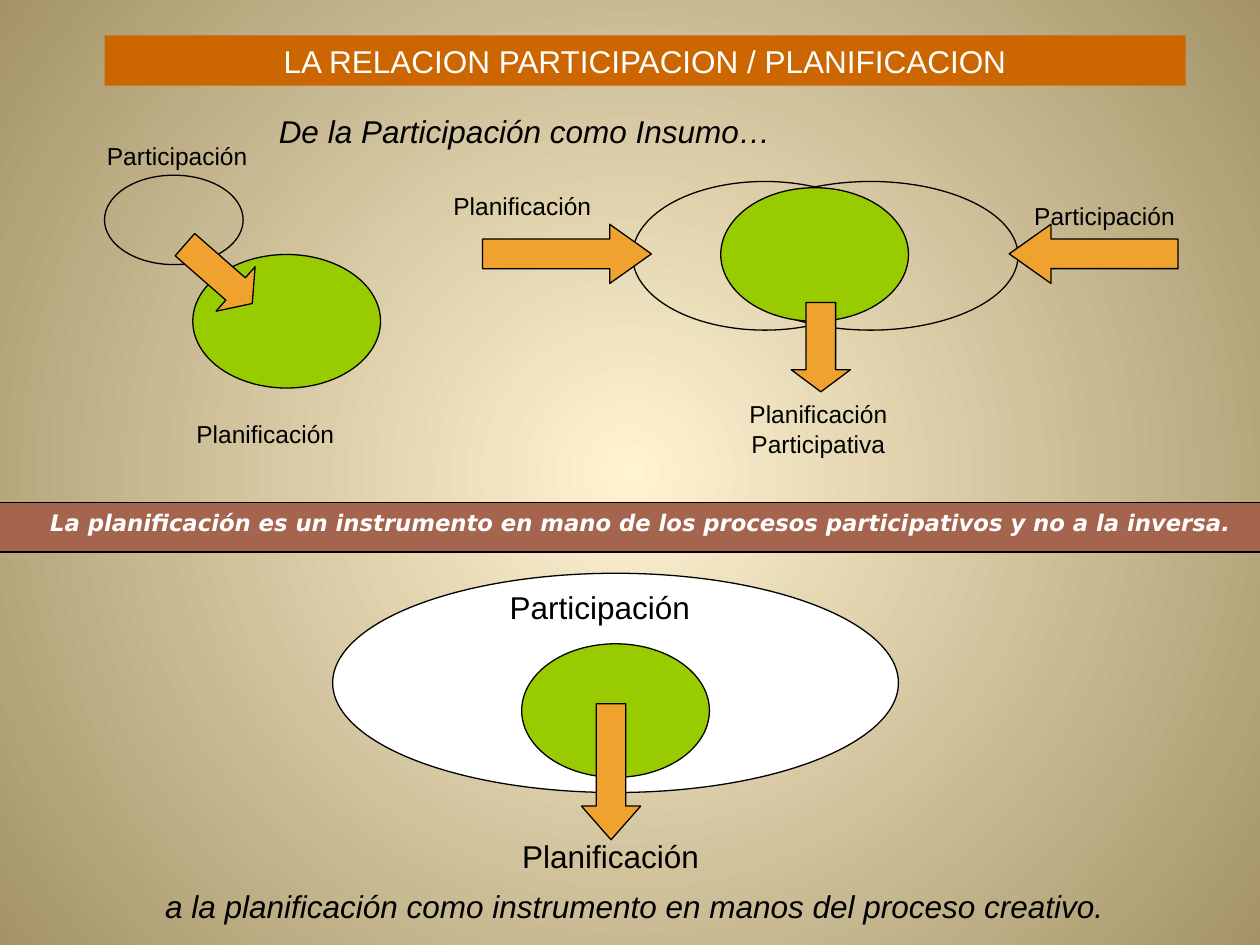
from lxml.etree import SubElement
from pptx import Presentation
from pptx.dml.color import RGBColor
from pptx.enum.shapes import MSO_SHAPE as SHAPE
from pptx.enum.text import MSO_ANCHOR as ANCHOR, PP_ALIGN as ALIGN
from pptx.oxml.ns import qn
from pptx.util import Inches, Pt

COLORS = {
    "black": "000000",
    "white": "FFFFFF",
    "green": "99CC00",
    "arrow": "F0A22E",
    "banner": "A5644E",
    "title": "CC6600",
    "glow": "FFF3D2",
    "edge": "A49468",
}
GREEN_SIZE = (1.49, 1.06)
ARROW_WIDTH = 0.47


def rgb(name):
    return RGBColor.from_string(COLORS[name])


def set_background(slide):
    """Circular gradient, light in the middle of the slide."""
    fill = slide.background.fill
    fill.gradient()
    for stop, name in zip(fill.gradient_stops, ("glow", "edge")):
        stop.color.rgb = rgb(name)
    grad = slide._element.find(".//" + qn("a:gradFill"))
    grad.remove(grad.find(qn("a:lin")))
    circle = SubElement(grad, qn("a:path"), {"path": "circle"})
    SubElement(circle, qn("a:fillToRect"), dict.fromkeys("ltrb", "50000"))


def write(sp, text, size=14, color="black", font="Arial", align=ALIGN.CENTER,
          bold=False, italic=False):
    tf = sp.text_frame
    tf.word_wrap = True
    tf.vertical_anchor = ANCHOR.TOP
    tf.margin_left = tf.margin_right = Inches(0.1)
    tf.margin_top = tf.margin_bottom = Inches(0.05)
    p = tf.paragraphs[0]
    p.alignment = align
    r = p.add_run()
    r.text = text
    r.font.name, r.font.size = font, Pt(size)
    r.font.bold, r.font.italic = bold, italic
    r.font.color.rgb = rgb(color)


def add_label(slide, text, left, top, width=1.89, height=0.33, **style):
    box = slide.shapes.add_textbox(*map(Inches, (left, top, width, height)))
    write(box, text, **style)


def add_outlined(slide, kind, left, top, width, height, fill=None):
    sp = slide.shapes.add_shape(kind, *map(Inches, (left, top, width, height)))
    sp.shadow.inherit = False
    if fill:
        sp.fill.solid()
        sp.fill.fore_color.rgb = rgb(fill)
    else:
        sp.fill.background()
    sp.line.color.rgb = rgb("black")
    sp.line.width = Pt(0.75)
    return sp


def add_oval(slide, left, top, width, height, fill=None):
    add_outlined(slide, SHAPE.OVAL, left, top, width, height, fill)


def add_arrow(slide, left, top, length, head, rotation=0):
    """Left arrow turned by rotation; head is its length over its width."""
    sp = add_outlined(slide, SHAPE.LEFT_ARROW, left, top, length, ARROW_WIDTH, "arrow")
    sp.adjustments[0], sp.adjustments[1] = 0.5, head
    sp.rotation = rotation


def add_title(slide, text):
    sp = slide.shapes.title
    sp.left, sp.top, sp.width, sp.height = map(Inches, (0.83, 0.28, 8.58, 0.4))
    sp.fill.solid()
    sp.fill.fore_color.rgb = rgb("title")
    write(sp, text, size=18, color="white")


def add_input_diagram(slide):
    add_oval(slide, 1.53, 2.02, *GREEN_SIZE, fill="green")
    add_oval(slide, 0.83, 1.39, 1.1, 0.71)
    add_arrow(slide, 1.38, 1.94, 0.71, 0.374, rotation=221.2)
    add_label(slide, "Participación", 0.75, 1.07, align=ALIGN.LEFT)
    add_label(slide, "Planificación", 1.46, 3.28, align=ALIGN.LEFT)


def add_overlap_diagram(slide):
    add_oval(slide, 5.02, 1.44, 2.1, 1.18)
    add_oval(slide, 5.74, 1.44, 2.34, 1.18)
    add_oval(slide, 5.72, 1.49, *GREEN_SIZE, fill="green")
    add_arrow(slide, 3.83, 1.78, 1.34, 0.706, rotation=180)
    add_arrow(slide, 8.01, 1.78, 1.34, 0.706)
    add_arrow(slide, 6.16, 2.52, 0.71, 0.374, rotation=270)
    add_label(slide, "Planificación", 3.5, 1.47, align=ALIGN.LEFT)
    add_label(slide, "Participación", 8.11, 1.55, align=ALIGN.LEFT)
    add_label(slide, "Planificación Participativa", 5.55, 3.12, height=0.57)


def add_instrument_diagram(slide):
    add_oval(slide, 2.64, 4.55, 4.49, 1.74, fill="white")
    add_oval(slide, 4.14, 5.11, *GREEN_SIZE, fill="green")
    add_arrow(slide, 4.31, 5.89, 1.08, 0.569, rotation=270)
    add_label(slide, "Participación", 3.58, 4.62, 2.36, 0.4, size=18)
    add_label(slide, "Planificación", 3.9, 6.59, height=0.4, size=18)


def main():
    prs = Presentation()
    prs.slide_width, prs.slide_height = Inches(10), Inches(7.5)
    slide = prs.slides.add_slide(prs.slide_layouts[5])
    set_background(slide)
    add_title(slide, "LA RELACION PARTICIPACION / PLANIFICACION")

    add_overlap_diagram(slide)
    add_instrument_diagram(slide)
    banner = add_outlined(slide, SHAPE.RECTANGLE, -0.1, 3.99, 10.35, 0.39, "banner")
    write(banner, "La planificación es un instrumento en mano de los procesos "
          "participativos y no a la inversa.",
          size=13, color="white", font="DejaVu Sans", bold=True, italic=True)
    add_input_diagram(slide)

    add_label(slide, "De la Participación como Insumo…", 0.03, 0.84, 8.27, 0.4,
              size=18, italic=True)
    add_label(slide, "a la planificación como instrumento en manos del proceso creativo.",
              0.9, 6.99, 8.27, 0.4, size=18, italic=True)
    prs.save("out.pptx")


if __name__ == "__main__":
    main()
